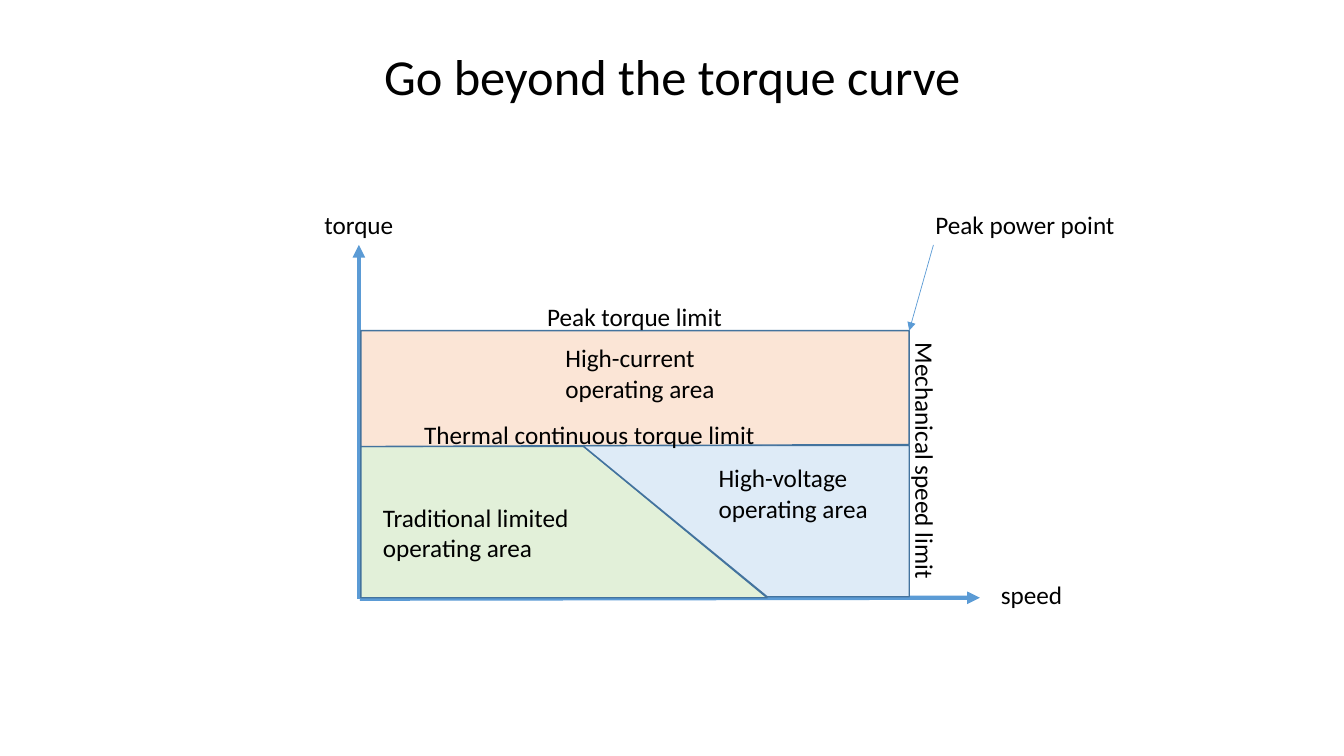
import pptx
import pptx.dml.color
import pptx.enum.shapes
import pptx.enum.text
import pptx.util
from lxml import etree

COLUMNS, ROWS = 133.33, 75  # grid cells of a tenth of an inch
AXIS_BLUE, EDGE_BLUE = "5B9BD5", "43739E"


def color(hex_code):
    return pptx.dml.color.RGBColor.from_string(hex_code)


def write(frame, text, *, size=18, font="Calibri", ink="000000", align="LEFT", spacing=1.0):
    paragraph = frame.paragraphs[0]
    paragraph.alignment = getattr(pptx.enum.text.PP_ALIGN, align)
    paragraph.line_spacing = spacing
    run = paragraph.add_run()
    run.text = text
    run.font.size = pptx.util.Pt(size)
    run.font.name = font
    run.font.color.rgb = color(ink)


class Diagram:
    """Draws on one slide; every length is in grid columns and rows."""

    def __init__(self, deck):
        self.slide = deck.slides.add_slide(deck.slide_layouts[6])
        self.column = deck.slide_width / COLUMNS
        self.row = deck.slide_height / ROWS

    def place(self, column, row):
        return round(column * self.column), round(row * self.row)

    def label(self, text, left, top, width, height=4, rotation=0, anchor="TOP", **style):
        box = self.slide.shapes.add_textbox(*self.place(left, top), *self.place(width, height))
        box.rotation = rotation
        box.text_frame.word_wrap = True
        box.text_frame.vertical_anchor = getattr(pptx.enum.text.MSO_ANCHOR, anchor)
        write(box.text_frame, text, **style)

    def arrow(self, start, end, weight):
        line = self.slide.shapes.add_connector(
            pptx.enum.shapes.MSO_CONNECTOR.STRAIGHT, *self.place(*start), *self.place(*end))
        line.line.color.rgb = color(AXIS_BLUE)
        line.line.width = pptx.util.Pt(weight)
        head = etree.SubElement(line.line._get_or_add_ln(), pptx.oxml.ns.qn("a:tailEnd"))
        head.set("type", "triangle")
        etree.SubElement(line._element.spPr, pptx.oxml.ns.qn("a:effectLst"))

    def area(self, corners, fill):
        first, *rest = [self.place(*corner) for corner in corners]
        builder = self.slide.shapes.build_freeform(*first)
        builder.add_line_segments(rest, close=True)
        region = builder.convert_to_shape()
        region.shadow.inherit = False
        region.fill.solid()
        region.fill.fore_color.rgb = color(fill)
        region.line.color.rgb = color(EDGE_BLUE)
        region.line.width = pptx.util.Pt(1)


def main():
    deck = pptx.Presentation()
    deck.slide_width = pptx.util.Inches(13.33)
    deck.slide_height = pptx.util.Inches(7.5)
    diagram = Diagram(deck)

    zero_speed, top_speed, base_speed, knee_speed = 35.8, 90.2, 57.9, 76.1
    peak_torque, thermal_torque, zero_torque = 32.8, 44.3, 59.3
    axis_top = 24.3

    diagram.label("Go beyond the torque curve", 9.2, 4, 115, 7.8,
                  anchor="MIDDLE", size=36, align="CENTER", spacing=0.9)
    diagram.arrow((35.6, 59.4), (35.6, axis_top), 3)
    diagram.arrow((35.7, 59.4), (97.2, 59.3), 3)

    diagram.area([(zero_speed, thermal_torque), (base_speed, thermal_torque),
                  (knee_speed, zero_torque), (zero_speed, zero_torque)], "E2F0D9")
    diagram.area([(57.8, 44.2), (top_speed, 44.2),
                  (top_speed, 59.2), (knee_speed, 59.2)], "DEEBF7")
    diagram.area([(top_speed, 44.1), (top_speed, peak_torque),
                  (zero_speed, peak_torque), (zero_speed, thermal_torque)], "FBE5D6")
    diagram.arrow((92.6, axis_top), (top_speed, peak_torque), 0.5)

    for text, left, top, width in [
        ("speed", 98.3, 57, 8.8),
        ("torque", 31.2, 20.3, 9.9),
        ("Peak torque limit", 53.3, 29.4, 19.5),
        ("Peak power point", 91.8, 20.3, 22.7),
        ("Thermal continuous torque limit", 41.1, 41.1, 36),
    ]:
        diagram.label(text, left, top, width)
    diagram.label("Mechanical speed limit", 77.8, 45, 28, rotation=90)

    for text, left, top, width in [
        ("High-current operating area", 55.1, 33.5, 22.7),
        ("Traditional limited operating area", 37, 49.3, 24.8),
        ("High-voltage operating area", 70.3, 45.4, 22.7),
    ]:
        diagram.label(text, left, top, width, height=7.1)

    deck.save("out.pptx")


if __name__ == "__main__":
    main()
